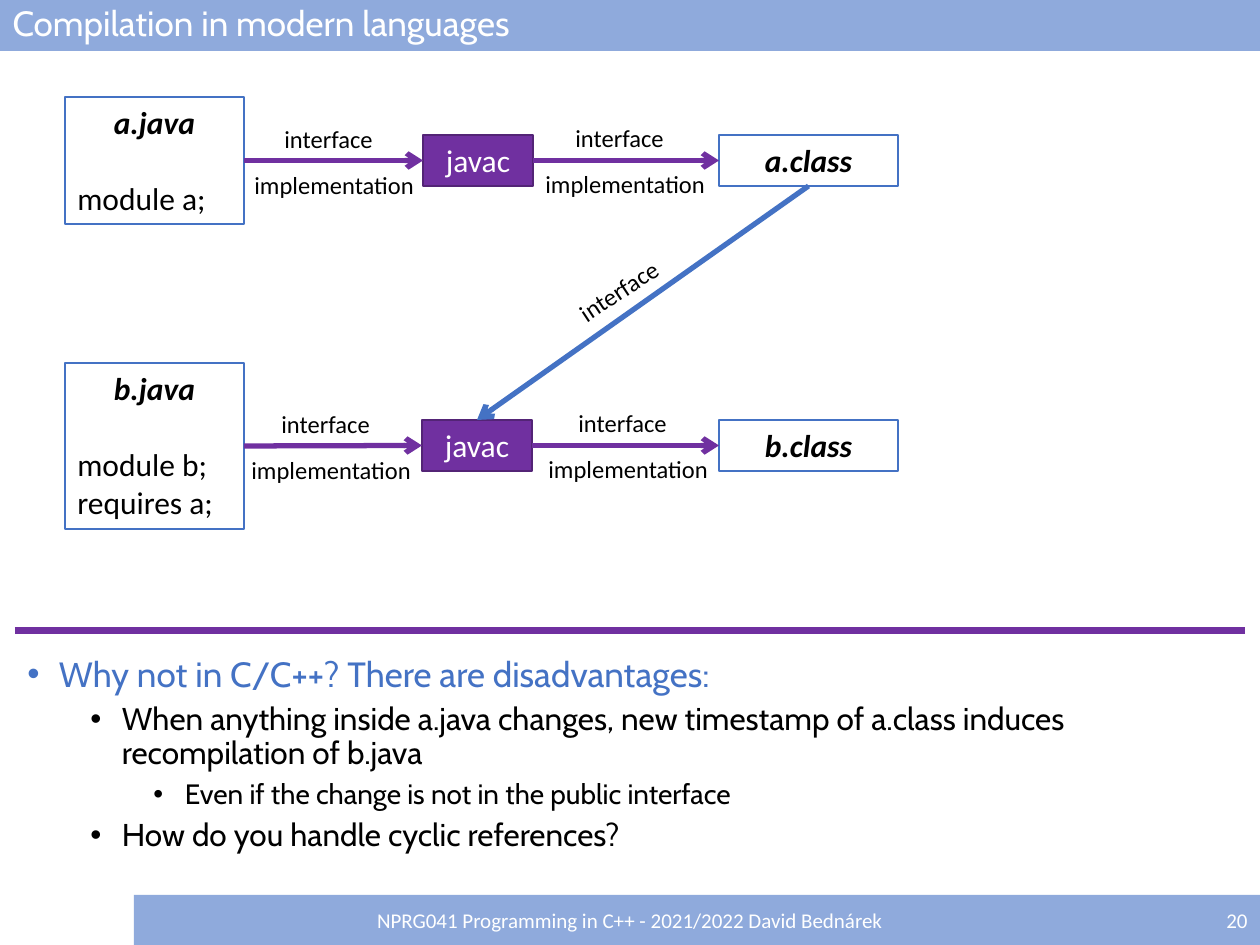
from lxml.etree import SubElement
from pptx import Presentation
from pptx.dml.color import RGBColor
from pptx.enum.shapes import MSO_CONNECTOR as LINK, MSO_SHAPE as SHAPE
from pptx.enum.text import MSO_ANCHOR as ANCHOR, MSO_AUTO_SIZE as FIT, PP_ALIGN as ALIGN
from pptx.oxml.ns import qn
from pptx.util import Pt

SCALE = 914400 / 126
BAR, BLUE, PURPLE, EDGE = "8FAADC", "4472C4", "7030A0", "532476"
WHITE, BLACK = "FFFFFF", "000000"
TOP, LEFT, BOTTOM, RIGHT = range(4)
NAME_STYLE = {"bold": True, "italic": True}
BULLETS = [
    (0, "Why not in C/C++? There are disadvantages:", 20, BLUE),
    (1, "When anything inside a.java changes, new timestamp of a.class induces "
        "recompilation of b.java", 18, BLACK),
    (2, "Even if the change is not in the public interface", 16, BLACK),
    (1, "How do you handle cyclic references?", 18, BLACK),
]


def px(*lengths):
    """Turn pixel lengths into a list of EMU."""
    return [round(length * SCALE) for length in lengths]


def paint(color_format, color):
    """Apply a hex colour to a colour format."""
    color_format.rgb = RGBColor.from_string(color)


def fill(shape, color):
    """Give a shape a solid fill."""
    shape.fill.solid()
    paint(shape.fill.fore_color, color)


def set_all(target, values):
    """Set each named attribute on the target."""
    for name, value in values.items():
        setattr(target, name, value)


def write(para, text, size, color, font="Calibri", style=None, **layout):
    """Write one formatted span into a paragraph."""
    span = para.add_run()
    span.text = text
    set_all(span.font, {"name": font, "size": Pt(size), **(style or {})})
    paint(span.font.color, color)
    set_all(para, layout)


def add_box(page, area, color, edge=None, anchor=ANCHOR.TOP):
    """Add a filled rectangle and return it."""
    box = page.shapes.add_shape(SHAPE.RECTANGLE, *px(*area))
    box.shadow.inherit = False
    fill(box, color)
    if edge:
        paint(box.line.color, edge)
        box.line.width = Pt(1)
    else:
        box.line.fill.background()
    set_all(box.text_frame, {"word_wrap": True, "vertical_anchor": anchor})
    return box


def add_named_box(page, area, text, color=WHITE, edge=BLUE, ink=BLACK, style=NAME_STYLE):
    """Add an outlined box with a centred name."""
    box = add_box(page, area, color, edge)
    write(box.text_frame.paragraphs[0], text, 18, ink, style=style, alignment=ALIGN.CENTER)
    return box


def add_source(page, area, name, code):
    """Add a source file box with its code below the name."""
    box = add_named_box(page, area, name)
    box.text_frame.paragraphs[0].space_after = Pt(22)
    for line in code:
        write(box.text_frame.add_paragraph(), line, 18, BLACK, alignment=ALIGN.LEFT)
    return box


def add_line(page, start, end, color, width):
    """Add a straight line without a shadow."""
    line = page.shapes.add_connector(LINK.STRAIGHT, *px(*start, *end))
    paint(line.line.color, color)
    line.line.width = Pt(width)
    SubElement(line._element.spPr, qn("a:effectLst"))
    return line


def add_arrow(page, source, target, color=PURPLE, sites=(RIGHT, LEFT)):
    """Join two boxes with an arrow."""
    arrow = add_line(page, (0, 0), (0, 0), color, 3)
    arrow.begin_connect(source, sites[0])
    arrow.end_connect(target, sites[1])
    SubElement(arrow.line._get_or_add_ln(), qn("a:tailEnd"), type="arrow")


def add_label(page, left, top, text, width, rotation=0):
    """Add a one-line label."""
    label = page.shapes.add_textbox(*px(left, top, width, 43))
    label.rotation = rotation
    set_all(label.text_frame, {"word_wrap": False, "auto_size": FIT.SHAPE_TO_FIT_TEXT})
    write(label.text_frame.paragraphs[0], text, 14, BLACK)


def add_flow(page, source, compiler, output, labels):
    """Join one compilation row and label its arrows."""
    add_arrow(page, source, compiler)
    add_arrow(page, compiler, output)
    for left, top in labels:
        add_label(page, left, top, "interface", 115)
        add_label(page, left - 30, top + 46, "implementation", 186)


def add_title(page, text):
    """Format the title placeholder as the top bar."""
    title = page.shapes.title
    set_all(title, dict(zip(("left", "top", "width", "height"), px(0, 0, 1260, 51))))
    fill(title, BAR)
    set_all(title.text_frame, {"vertical_anchor": ANCHOR.MIDDLE, "auto_size": FIT.NONE})
    write(title.text_frame.paragraphs[0], text, 20, WHITE, "Cabin",
          alignment=ALIGN.LEFT, line_spacing=0.9)


def add_bullets(page, area, items):
    """Add the bulleted text."""
    frame = page.shapes.add_textbox(*px(*area)).text_frame
    frame.word_wrap = True
    for index, (level, text, size, color) in enumerate(items):
        para = frame.add_paragraph() if index else frame.paragraphs[0]
        write(para, text, size, color, "Cabin", level=level, line_spacing=0.9,
              space_before=Pt(5 if level else 10))
        props = para._p.get_or_add_pPr()
        indent, margin = px(-31.5, 31.5 + 63 * level)
        props.set("marL", str(margin))
        props.set("indent", str(indent))
        SubElement(props, qn("a:buFont"), typeface="Arial")
        SubElement(props, qn("a:buChar"), char="•")


def add_footer(page, left, width, text, alignment):
    """Add one part of the bottom bar."""
    bar = add_box(page, (left, 895, width, 50), BAR, anchor=ANCHOR.MIDDLE)
    write(bar.text_frame.paragraphs[0], text, 12, WHITE, alignment=alignment)


def main():
    """Build and save the slide."""
    deck = Presentation()
    deck.slide_width, deck.slide_height = px(1260, 945)
    page = deck.slides.add_slide(deck.slide_layouts[5])
    add_title(page, "Compilation in modern languages")
    add_line(page, (15, 631), (1245, 631), PURPLE, 4)
    add_bullets(page, (15, 651, 1230, 238), BULLETS)
    add_footer(page, 1126, 134, "20", ALIGN.RIGHT)
    add_footer(page, 134, 992, "NPRG041 Programming in C++ - 2021/2022 David Bednárek",
               ALIGN.CENTER)

    sources = [add_source(page, (65, 97, 179, 127), "a.java", ["module a;"]),
               add_source(page, (65, 363, 179, 166), "b.java", ["module b;", "requires a;"])]
    compilers = [add_named_box(page, (left, top, 110, 51), "javac", PURPLE, EDGE, WHITE, None)
                 for left, top in ((423, 135), (422, 420))]
    outputs = [add_named_box(page, (719, top, 179, 51), name)
               for top, name in ((135, "a.class"), (420, "b.class"))]
    labels = [((272, 118), (563, 117)), ((269, 403), (566, 402))]
    for row in zip(sources, compilers, outputs, labels):
        add_flow(page, *row)
    add_arrow(page, outputs[0], compilers[1], BLUE, (BOTTOM, TOP))
    add_label(page, 562, 269, "interface", 115, -33.4)
    deck.save("out.pptx")


if __name__ == "__main__":
    main()
